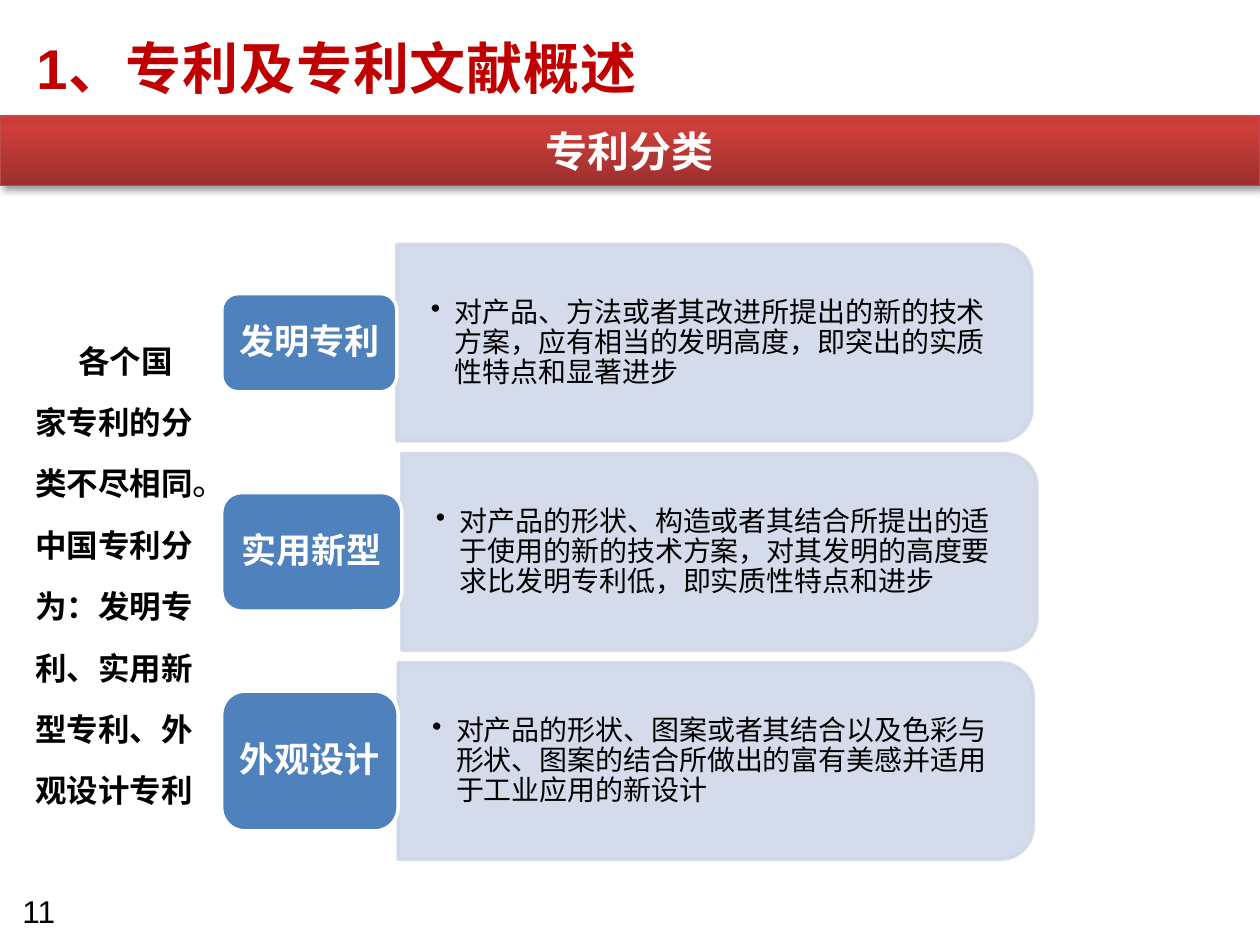
from lxml import etree
from pptx import Presentation
from pptx.dml.color import RGBColor
from pptx.enum.shapes import MSO_CONNECTOR as Connector, MSO_SHAPE as Shape
from pptx.enum.text import MSO_ANCHOR as Anchor, PP_ALIGN as Align
from pptx.oxml import parse_xml
from pptx.oxml.ns import nsdecls, qn
from pptx.util import Inches, Pt

BLACK = RGBColor(0x00, 0x00, 0x00)
WHITE = RGBColor(0xFF, 0xFF, 0xFF)
TITLE_RED = RGBColor(0xC0, 0x00, 0x00)
BANNER_LINE = RGBColor(0xBF, 0x4C, 0x48)
BANNER_STOPS = [
    (0, RGBColor(0x9C, 0x2F, 0x2D)),
    (80, RGBColor(0xCB, 0x3E, 0x3A)),
    (100, RGBColor(0xCE, 0x3B, 0x37)),
]
RULE_GREY = RGBColor(0xEA, 0xEA, 0xEA)
LABEL_BLUE = RGBColor(0x4F, 0x81, 0xBD)
PANEL_BLUE = RGBColor(0xD0, 0xD8, 0xE8)

LABEL_LEFT = 1.76
PANEL_WIDTH, PANEL_HEIGHT = 5.04, 1.56
FIRST_CENTER, ROW_PITCH = 2.72, 1.66

PATENT_TYPES = [
    ("发明专利", 1.39, 0.78,
     "对产品、方法或者其改进所提出的新的技术方案，应有相当的发明高度，即突出的实质性特点和显著进步"),
    ("实用新型", 1.43, 0.94,
     "对产品的形状、构造或者其结合所提出的适于使用的新的技术方案，对其发明的高度要求比发明专利低，即实质性特点和进步"),
    ("外观设计", 1.4, 1.11,
     "对产品的形状、图案或者其结合以及色彩与形状、图案的结合所做出的富有美感并适用于工业应用的新设计"),
]
INTRO_RUNS = [
    ("各个国家专利的分类不尽相同", "Arial", 18, True),
    ("。", "Roboto", 20, False),
    ("中国专利分为：发明专利、实用新型专利、外观设计专利", "Arial", 18, True),
]


def set_font(run, name, size, color, bold=False):
    """Format one run."""
    run.font.name = name
    run.font.size = Pt(size)
    run.font.bold = bold
    run.font.color.rgb = color


def set_insets(text_frame, horizontal, vertical):
    """Set symmetric insets on a text frame."""
    text_frame.margin_left = text_frame.margin_right = Inches(horizontal)
    text_frame.margin_top = text_frame.margin_bottom = Inches(vertical)


def set_text(shape, text, name, size, color, bold=False, align=Align.LEFT):
    """Fill a shape with one vertically centred paragraph and return it."""
    text_frame = shape.text_frame
    text_frame.word_wrap = True
    text_frame.vertical_anchor = Anchor.MIDDLE
    text_frame.text = text
    paragraph = text_frame.paragraphs[0]
    paragraph.alignment = align
    set_font(paragraph.runs[0], name, size, color, bold)
    return paragraph


def add_box(slide, left, top, width, height):
    """Add an empty text box placed in inches."""
    return slide.shapes.add_textbox(
        Inches(left), Inches(top), Inches(width), Inches(height))


def add_block(slide, kind, left, top, width, height, fill, line, line_width):
    """Add a preset shape without a shadow."""
    shape = slide.shapes.add_shape(
        kind, Inches(left), Inches(top), Inches(width), Inches(height))
    shape.shadow.inherit = False
    shape.fill.solid()
    shape.fill.fore_color.rgb = fill
    shape.line.color.rgb = line
    shape.line.width = Pt(line_width)
    return shape


def add_rule(slide):
    """Add the thin rule under the title."""
    rule = slide.shapes.add_connector(
        Connector.STRAIGHT, Inches(0), Inches(0.92), Inches(10), Inches(0.92))
    rule.line.color.rgb = RULE_GREY
    rule.line.width = Pt(0.75)
    etree.SubElement(rule._element.spPr, qn("a:effectLst"))


def add_banner(slide, text):
    """Add the full-width gradient banner with its soft shadow."""
    banner = add_block(
        slide, Shape.RECTANGLE, 0, 0.92, 10, 0.55, BANNER_LINE, BANNER_LINE, 0.75)
    banner.fill.gradient()
    banner.fill.gradient_angle = 90
    stops = "".join(
        f'<a:gs pos="{position * 1000}"><a:srgbClr val="{color}"/></a:gs>'
        for position, color in BANNER_STOPS)
    properties = banner._element.spPr
    gradient = properties.find(qn("a:gradFill"))
    gradient.replace(
        gradient.find(qn("a:gsLst")),
        parse_xml(f'<a:gsLst {nsdecls("a")}>{stops}</a:gsLst>'))
    properties.find(qn("a:effectLst")).append(parse_xml(
        f'<a:outerShdw {nsdecls("a")} blurRad="{Pt(4)}" dist="{Pt(3)}" dir="2700000">'
        '<a:srgbClr val="000000"><a:alpha val="40000"/></a:srgbClr></a:outerShdw>'))
    set_text(banner, text, "Noto Sans CJK SC", 24, WHITE, True, Align.CENTER)


def add_panel(slide, left, center, text):
    """Add a description panel rounded on its right side."""
    panel = add_block(
        slide, Shape.ROUND_2_SAME_RECTANGLE,
        left + (PANEL_WIDTH - PANEL_HEIGHT) / 2, center - PANEL_WIDTH / 2,
        PANEL_HEIGHT, PANEL_WIDTH, PANEL_BLUE, PANEL_BLUE, 2)
    panel.rotation = 90
    for color in panel._element.spPr.iter(qn("a:srgbClr")):
        etree.SubElement(color, qn("a:alpha"), val="90000")
    box = add_box(slide, left, center - 0.7, 4.96, 1.41)
    set_insets(box.text_frame, 0.27, 0.14)
    paragraph = set_text(box, text, "DejaVu Sans", 16, BLACK)
    paragraph.line_spacing = 0.9
    properties = paragraph._p.get_or_add_pPr()
    properties.set("marL", str(Inches(0.19)))
    properties.set("indent", str(-Inches(0.19)))
    etree.SubElement(properties, qn("a:buChar"), char="•")


def add_label(slide, center, width, height, text):
    """Add the rounded name label of a patent type."""
    label = add_block(
        slide, Shape.ROUNDED_RECTANGLE, LABEL_LEFT, center - height / 2,
        width, height, LABEL_BLUE, WHITE, 2)
    set_insets(label.text_frame, 0.08, 0.04)
    paragraph = set_text(label, text, "DejaVu Sans", 20, WHITE, True, Align.CENTER)
    paragraph.line_spacing = 0.9


def add_intro(slide):
    """Add the introductory paragraph on the left."""
    text_frame = add_box(slide, 0.28, 2.53, 1.26, 3.98).text_frame
    text_frame.word_wrap = True
    set_insets(text_frame, 0, 0)
    text_frame.margin_bottom = Inches(0.05)
    paragraph = text_frame.paragraphs[0]
    paragraph.line_spacing = Pt(35)
    paragraph._p.get_or_add_pPr().set("indent", str(Inches(0.34)))
    for text, name, size, bold in INTRO_RUNS:
        run = paragraph.add_run()
        run.text = text
        set_font(run, name, size, BLACK, bold)


def add_title(slide, text):
    """Add the slide title."""
    box = add_box(slide, 0.19, 0.13, 8.59, 0.81)
    paragraph = set_text(box, text, "Arial", 32, TITLE_RED, True)
    paragraph.runs[0]._r.get_or_add_rPr().set("spc", "50")


def main():
    """Build the slide and save it."""
    presentation = Presentation()
    presentation.slide_width = Inches(10)
    presentation.slide_height = Inches(7.5)
    slide = presentation.slides.add_slide(presentation.slide_layouts[6])
    add_rule(slide)
    set_text(add_box(slide, 0.08, 7.03, 0.7, 0.4), "11", "Arial", 18, BLACK)
    add_banner(slide, "专利分类")
    for row, (name, width, height, description) in enumerate(PATENT_TYPES):
        center = FIRST_CENTER + row * ROW_PITCH
        add_panel(slide, LABEL_LEFT + width, center, description)
        add_label(slide, center, width, height, name)
    add_intro(slide)
    add_title(slide, "1、专利及专利文献概述")
    presentation.save("out.pptx")


if __name__ == "__main__":
    main()
